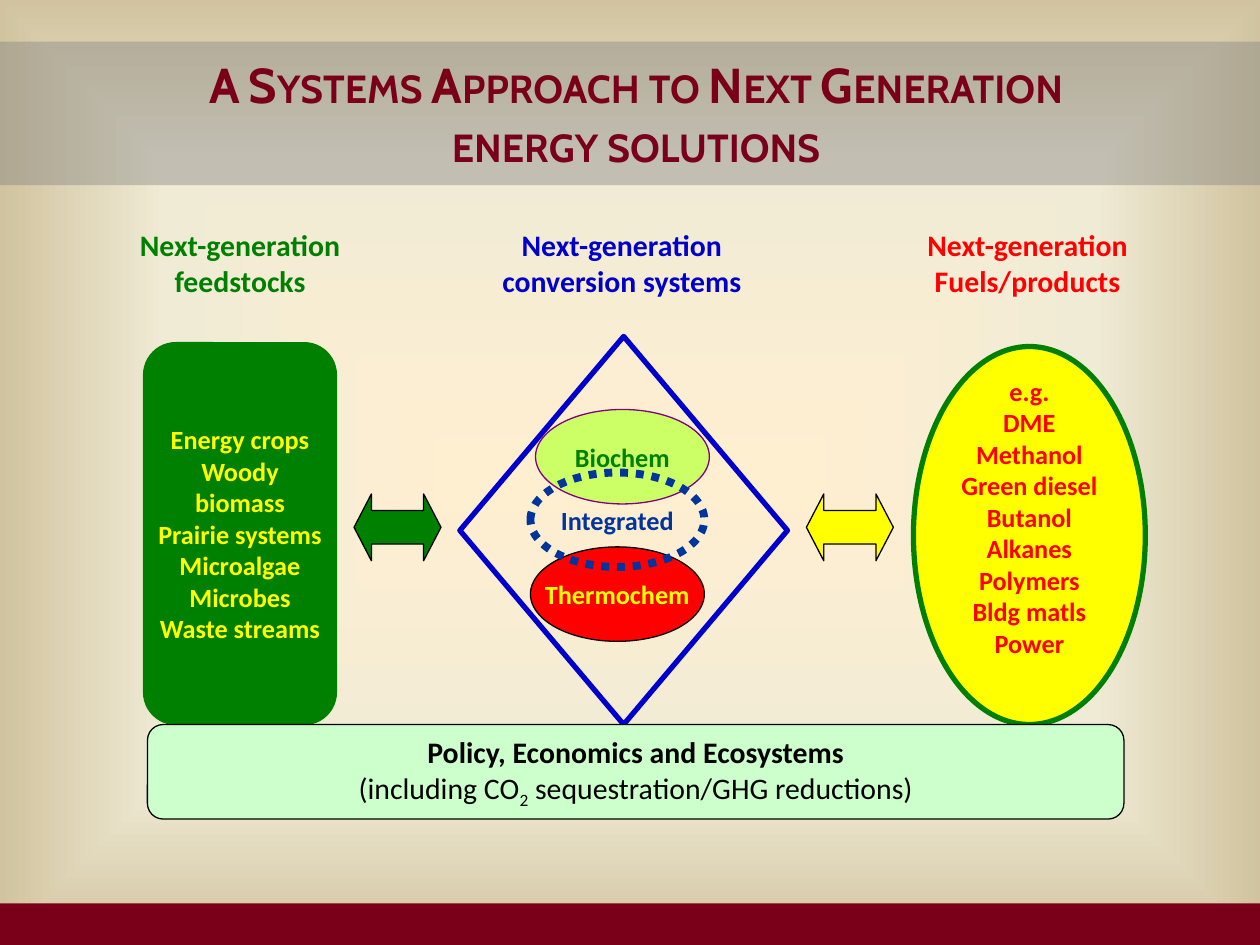
from lxml.etree import SubElement as Sub
from pptx import Presentation
from pptx.dml.color import RGBColor as RGB
from pptx.enum.dml import MSO_LINE as Dash
from pptx.enum.shapes import MSO_SHAPE as Geo
from pptx.enum.text import MSO_ANCHOR as Anchor, MSO_AUTO_SIZE as Auto, PP_ALIGN as Align
from pptx.oxml import parse_xml
from pptx.oxml.ns import nsdecls, qn
from pptx.util import Inches, Pt

GREEN, BLUE, RED = RGB(0, 128, 0), RGB(0, 0, 204), RGB(255, 0, 0)
YELLOW, LIME, MINT = RGB(255, 255, 0), RGB(204, 255, 102), RGB(204, 255, 204)
PURPLE, NAVY, BLACK = RGB(128, 0, 128), RGB(1, 53, 157), RGB(0, 0, 0)
MAROON, GREY = RGB(122, 0, 25), RGB(127, 127, 127)
GLOW = [(0, "FFEFD1"), (65, "F0EBD5"), (100, "D1C39F")]
WIDE, HIGH = 10, 7.5

# name: plain content; every box is left, top, width, height in percent of the slide
TITLE = ["A Systems Approach to Next Generation", "energy solutions"]
CROPS = ["Energy crops", "Woody biomass", "Prairie systems", "Microalgae",
         "Microbes", "Waste streams"]
FUELS = ["e.g.", "DME", "Methanol", "Green diesel", "Butanol", "Alkanes",
         "Polymers", "Bldg matls", "Power"]
HEADS = [
    (10, 18.1, "feedstocks", GREEN),
    (38.8, 21.1, "conversion systems", BLUE),
    (72.5, 18.1, "Fuels/products", RED),
]
ROUTES = [
    (42.5, 43.33, "Biochem", GREEN, LIME, PURPLE, 0.75),
    (42.1, 57.87, "Thermochem", YELLOW, RED, BLACK, 0.75),
    (42.1, 50, "Integrated", NAVY, None, NAVY, 4.5),
]
ARROWS = [(28.1, GREEN), (64, YELLOW)]
POLICY = "Policy, Economics and Ecosystems"
GAS = [("(including CO", 0), ("2", -25000), (" sequestration/GHG reductions)", 0)]


def area(x, y, w, h):
    """Turn shares of the slide into lengths."""
    return [Inches(n * side / 100) for n, side in zip((x, y, w, h), (WIDE, HIGH) * 2)]


def style(run, size, color, bold=True, face="Calibri"):
    """Set the font of a run."""
    for key, val in {"size": Pt(size), "bold": bold, "name": face}.items():
        setattr(run.font, key, val)
    run.font.color.rgb = color


def write(shape, lines, size, color, wrap=False, face="Calibri", **form):
    """Fill a shape with centred lines."""
    frame = shape.text_frame
    base = {"word_wrap": wrap, "auto_size": Auto.NONE, "vertical_anchor": Anchor.MIDDLE,
            "margin_left": Inches(0.1), "margin_right": Inches(0.1),
            "margin_top": Inches(0.05), "margin_bottom": Inches(0.05)}
    for key, val in {**base, **form}.items():
        setattr(frame, key, val)
    for i, line in enumerate(lines):
        para = frame.paragraphs[0] if i == 0 else frame.add_paragraph()
        para.alignment = Align.CENTER
        run = para.add_run()
        run.text = line
        style(run, size, color, face=face)
    return frame


def draw(slide, geo, box, fill=None, line=None, width=0.75):
    """Add a flat preset shape."""
    shape = slide.shapes.add_shape(geo, *area(*box))
    shape.shadow.inherit = False
    for part, color in ((shape.fill, fill), (shape.line.fill, line)):
        if color is None:
            part.background()
        else:
            part.solid()
            part.fore_color.rgb = color
    if line is not None:
        shape.line.width = Pt(width)
    return shape


def glow(slide):
    """Give the slide a glow from its centre."""
    stops = "".join(f'<a:gs pos="{p * 1000}"><a:srgbClr val="{c}"/></a:gs>' for p, c in GLOW)
    back = parse_xml(
        f'<p:bg {nsdecls("p", "a")}><p:bgPr><a:gradFill rotWithShape="1">'
        f'<a:gsLst>{stops}</a:gsLst><a:path path="shape">'
        '<a:fillToRect l="50000" t="50000" r="50000" b="50000"/></a:path>'
        '</a:gradFill><a:effectLst/></p:bgPr></p:bg>')
    slide.element.cSld.insert(0, back)


def head(slide):
    """Place the title on its clear band."""
    title = slide.shapes.title
    title.left, title.top, title.width, title.height = area(0, 4.4, 100, 15.2)
    title.fill.solid()
    title.fill.fore_color.rgb = GREY
    tint = title.element.spPr.find(qn("a:solidFill"))[0]
    Sub(tint, qn("a:alpha"), val="40000")
    edge = Inches(0.1)
    frame = write(title, TITLE, 28, MAROON, True, "Cabin", vertical_anchor=Anchor.TOP,
                  margin_right=0, margin_top=edge, margin_bottom=edge)
    for para in frame.paragraphs:
        para.runs[0].font._element.set("cap", "small")


def main():
    """Build the slide."""
    deck = Presentation()
    deck.slide_width, deck.slide_height = Inches(WIDE), Inches(HIGH)
    slide = deck.slides.add_slide(deck.slide_layouts[5])
    glow(slide)
    head(slide)

    crops = draw(slide, Geo.ROUNDED_RECTANGLE, (11.4, 36.27, 15.3, 40.4), GREEN, GREEN)
    write(crops, CROPS, 15, YELLOW, True, margin_left=Inches(0.02), margin_right=Inches(0.02))
    draw(slide, Geo.DIAMOND, (36.5, 35.6, 26, 41.07), None, BLUE, 3)
    for x, y, name, ink, fill, line, width in ROUTES:
        oval = draw(slide, Geo.OVAL, (x, y, 13.8, 10), fill, line, width)
        if fill is None:
            oval.line.dash_style = Dash.ROUND_DOT
        write(oval, [name], 15, ink)
    fuels = draw(slide, Geo.OVAL, (72.5, 36.67, 18.4, 40), YELLOW, GREEN, 3)
    write(fuels, FUELS, 15, RED, margin_bottom=Inches(0.35))

    for x, w, name, ink in HEADS:
        label = slide.shapes.add_textbox(*area(x, 23.33, w, 9.07))
        write(label, ["Next-generation", name], 17, ink, vertical_anchor=Anchor.TOP)
    for x, fill in ARROWS:
        arrow = draw(slide, Geo.LEFT_RIGHT_ARROW, (x, 52.27, 6.9, 7.07), fill, BLACK)
        arrow.adjustments[1] = 0.26

    base = draw(slide, Geo.ROUNDED_RECTANGLE, (11.7, 76.67, 77.5, 10), MINT, BLACK)
    para = write(base, [POLICY], 17, BLACK).add_paragraph()
    para.alignment = Align.CENTER
    for text, shift in GAS:
        run = para.add_run()
        run.text = text
        style(run, 17, BLACK, False)
        if shift:
            run.font._element.set("baseline", str(shift))
    draw(slide, Geo.RECTANGLE, (0, 95.6, 100, 4.4), MAROON)
    deck.save("out.pptx")


if __name__ == "__main__":
    main()
